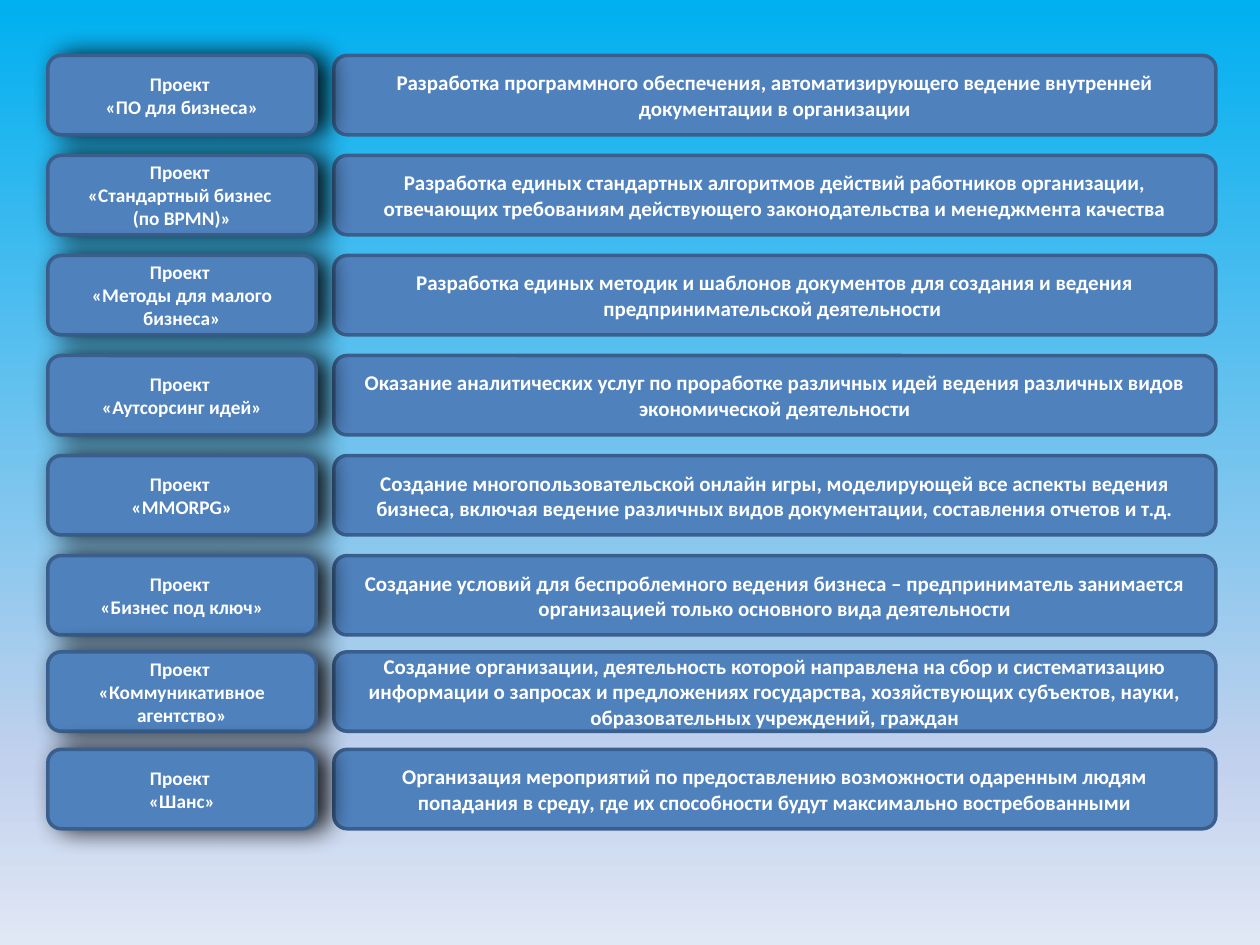
from copy import deepcopy
from dataclasses import dataclass

from lxml.etree import SubElement
from pptx import Presentation
from pptx.dml.color import RGBColor
from pptx.enum.shapes import MSO_SHAPE
from pptx.enum.text import MSO_ANCHOR, PP_ALIGN
from pptx.oxml.ns import qn
from pptx.util import Inches, Pt


@dataclass(frozen=True)
class Column:
    left: float
    width: float
    font_size: int
    shadowed: bool


@dataclass(frozen=True)
class Project:
    name: str
    goal: str
    lift: float = 0


FIRST_TOP, SIXTH_TOP, ROW_HEIGHT = 0.44, 4.41, 0.63
ROW_PITCH = (SIXTH_TOP - FIRST_TOP) / 5
NAMES = Column(left=0.38, width=2.13, font_size=11, shadowed=True)
GOALS = Column(left=2.65, width=7, font_size=12, shadowed=False)
SKY = [(0, "00B0F0"), (0.81, "C2D1ED"), (1, "E1E8F5")]

PROJECTS = [
    Project("«ПО для бизнеса»",
            "Разработка программного обеспечения, автоматизирующего ведение "
            "внутренней документации в организации"),
    Project("«Стандартный бизнес \v(по BPMN)»",
            "Разработка единых стандартных алгоритмов действий работников организации, "
            "отвечающих требованиям действующего законодательства и менеджмента качества"),
    Project("«Методы для малого бизнеса»",
            "Разработка единых методик и шаблонов документов для создания и ведения "
            "предпринимательской деятельности "),
    Project("«Аутсорсинг идей»",
            "Оказание аналитических услуг по проработке различных идей ведения "
            "различных видов экономической деятельности"),
    Project("«MMORPG»",
            "Создание многопользовательской онлайн игры, моделирующей все аспекты ведения "
            "бизнеса, включая ведение различных видов документации, составления отчетов и т.д."),
    Project("«Бизнес под ключ»",
            "Создание условий для беспроблемного ведения бизнеса – предприниматель "
            "занимается организацией только основного вида деятельности"),
    Project("«Коммуникативное агентство»",
            "Создание организации, деятельность которой направлена на сбор и систематизацию "
            "информации о запросах и предложениях государства, хозяйствующих субъектов, "
            "науки, образовательных учреждений, граждан", lift=0.03),
    Project("«Шанс»",
            "Организация мероприятий по предоставлению возможности одаренным людям "
            "попадания в среду, где их способности будут максимально востребованными",
            lift=0.05),
]


def color(value: str) -> RGBColor:
    return RGBColor.from_string(value)


def paint_background(slide) -> None:
    fill = slide.background.fill
    fill.gradient()
    fill.gradient_angle = 270
    stops = slide.element.find(".//" + qn("a:gsLst"))
    stops.append(deepcopy(stops[0]))
    for stop, (position, shade) in zip(fill.gradient_stops, SKY):
        stop.position = position
        stop.color.rgb = color(shade)


def add_shadow(card) -> None:
    effects = card.element.spPr.find(qn("a:effectLst"))
    shadow = SubElement(effects, qn("a:outerShdw"), blurRad=str(Pt(15)),
                        dist=str(Pt(6)), dir="0", algn="ctr", rotWithShape="0")
    black = SubElement(shadow, qn("a:srgbClr"), val="000000")
    SubElement(black, qn("a:alpha"), val="89000")


def write_text(card, text: str, size: int) -> None:
    frame = card.text_frame
    frame.word_wrap = True
    frame.vertical_anchor = MSO_ANCHOR.MIDDLE
    paragraph = frame.paragraphs[0]
    paragraph.text = text
    paragraph.alignment = PP_ALIGN.CENTER
    for run in paragraph.runs:
        run.font.name = "Calibri"
        run.font.size = Pt(size)
        run.font.bold = True
        run.font.color.rgb = color("FFFFFF")
    for line_break in card.element.iter(qn("a:br")):
        SubElement(line_break, qn("a:rPr"), sz=str(size * 100), b="1")


def add_card(slide, column: Column, row: int, lift: float, text: str) -> None:
    top = FIRST_TOP + row * ROW_PITCH - lift
    card = slide.shapes.add_shape(
        MSO_SHAPE.ROUNDED_RECTANGLE, Inches(column.left), Inches(top),
        Inches(column.width), Inches(ROW_HEIGHT))
    card.fill.solid()
    card.fill.fore_color.rgb = color("4F81BD")
    card.line.color.rgb = color("3A5F8C")
    card.line.width = Pt(2)
    card.shadow.inherit = False
    if column.shadowed:
        add_shadow(card)
    write_text(card, text, column.font_size)


def main() -> None:
    deck = Presentation()
    deck.slide_width, deck.slide_height = Inches(10), Inches(7.5)
    slide = deck.slides.add_slide(deck.slide_layouts[6])
    paint_background(slide)
    for row, project in enumerate(PROJECTS):
        add_card(slide, GOALS, row, project.lift, project.goal)
    for row, project in enumerate(PROJECTS):
        add_card(slide, NAMES, row, project.lift, f"Проект \v{project.name}")
    deck.save("out.pptx")


if __name__ == "__main__":
    main()
